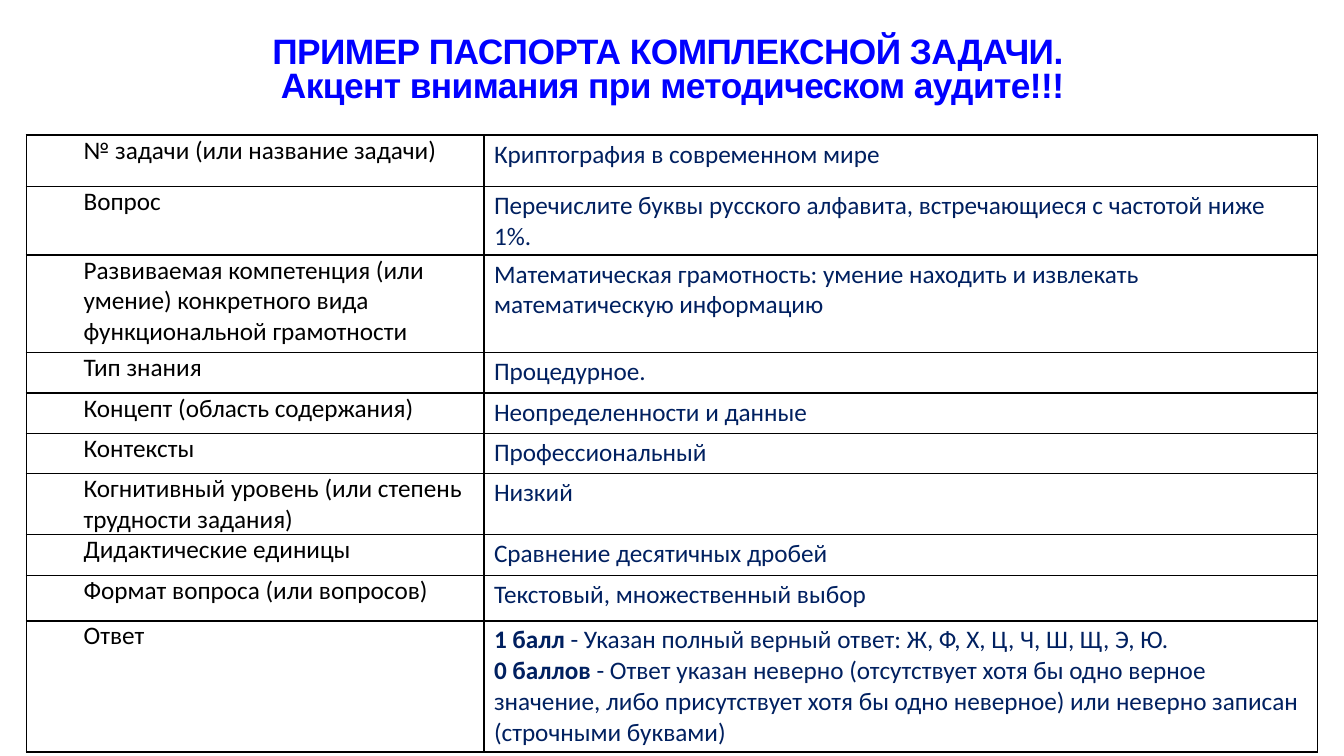
from pptx import Presentation
from pptx.dml.color import RGBColor
from pptx.enum.text import MSO_ANCHOR, PP_ALIGN
from pptx.oxml import parse_xml
from pptx.oxml.ns import nsdecls
from pptx.util import Inches, Pt

COLORS = {"title": "0000FF", "label": "000000", "value": "002060", "border": "000000"}
TITLE_LINES = [
    "ПРИМЕР ПАСПОРТА КОМПЛЕКСНОЙ ЗАДАЧИ. ",
    "Акцент внимания при методическом аудите!!!",
]
COLUMN_WIDTHS = [4.54, 8.27]
PASSPORT = [
    (0.51, "№ задачи (или название задачи)", [("", "Криптография в современном мире")]),
    (0.43, "Вопрос",
     [("", "Перечислите буквы русского алфавита, встречающиеся с частотой ниже 1%.")]),
    (0.97, "Развиваемая компетенция (или умение) конкретного вида функциональной грамотности",
     [("", "Математическая грамотность: умение находить и извлекать математическую информацию")]),
    (0.4, "Тип знания", [("", "Процедурное.")]),
    (0.4, "Концепт (область содержания)", [("", "Неопределенности и данные")]),
    (0.4, "Контексты", [("", "Профессиональный")]),
    (0.6, "Когнитивный уровень (или степень трудности задания)", [("", "Низкий")]),
    (0.41, "Дидактические единицы", [("", "Сравнение десятичных дробей")]),
    (0.45, "Формат вопроса (или вопросов)", [("", "Текстовый, множественный выбор")]),
    (1.3, "Ответ", [
        ("1 балл ", "- Указан полный верный ответ: Ж, Ф, Х, Ц, Ч, Ш, Щ, Э, Ю."),
        ("0 баллов ", "- Ответ указан неверно (отсутствует хотя бы одно верное значение, либо "
                      "присутствует хотя бы одно неверное) или неверно записан (строчными буквами)"),
    ]),
]


def set_margins(box, horizontal, vertical):
    """Set equal side margins and equal top and bottom margins, in inches."""
    box.margin_left = box.margin_right = Inches(horizontal)
    box.margin_top = box.margin_bottom = Inches(vertical)


def add_run(paragraph, text, color, font="Calibri", size=18, bold=False):
    """Add one formatted run to a paragraph."""
    run = paragraph.add_run()
    run.text = text
    run.font.name = font
    run.font.size = Pt(size)
    run.font.bold = bold
    run.font.color.rgb = RGBColor.from_string(COLORS[color])
    return run


def add_title(slide, left, top, width, height):
    """Place the centred two-line title in the given box."""
    shape = slide.shapes.add_textbox(Inches(left), Inches(top), Inches(width), Inches(height))
    frame = shape.text_frame
    frame.word_wrap = True
    frame.vertical_anchor = MSO_ANCHOR.MIDDLE
    set_margins(frame, 0.11, 0.06)
    paragraph = frame.paragraphs[0]
    paragraph.alignment = PP_ALIGN.CENTER
    paragraph.line_spacing = 0.8
    for index, line in enumerate(TITLE_LINES):
        if index:
            paragraph.add_line_break()
        run = add_run(paragraph, line, "title", "Arial", 25.2, True)
        run._r.get_or_add_rPr().set("spc", "-40")


def style_cell(cell):
    """Give a cell thin borders on all sides and no fill."""
    properties = cell._tc.get_or_add_tcPr()
    for side in ("lnL", "lnR", "lnT", "lnB"):
        properties.append(parse_xml(
            f'<a:{side} {nsdecls("a")} w="{Pt(1)}"><a:solidFill>'
            f'<a:srgbClr val="{COLORS["border"]}"/></a:solidFill></a:{side}>'))
    cell.fill.background()


def fill_label(cell, label):
    """Write the indented name of a passport field."""
    set_margins(cell, 0.07, 0)
    paragraph = cell.text_frame.paragraphs[0]
    properties = paragraph._p.get_or_add_pPr()
    properties.set("marL", str(Inches(0.5)))
    properties.set("indent", "0")
    properties.append(parse_xml(
        f'<a:tabLst {nsdecls("a")}><a:tab pos="{Inches(0.69)}" algn="l"/></a:tabLst>'))
    add_run(paragraph, label, "label")


def fill_value(cell, entries):
    """Write the value of a passport field, with optional bold lead-ins."""
    set_margins(cell, 0.1, 0.04)
    frame = cell.text_frame
    for index, (lead, text) in enumerate(entries):
        paragraph = frame.add_paragraph() if index else frame.paragraphs[0]
        if lead:
            add_run(paragraph, lead, "value", bold=True)
        add_run(paragraph, text, "value")


def add_passport(slide, left, top):
    """Place the passport table with its corner at the given point."""
    height = sum(row[0] for row in PASSPORT)
    table = slide.shapes.add_table(
        len(PASSPORT), len(COLUMN_WIDTHS), Inches(left), Inches(top),
        Inches(sum(COLUMN_WIDTHS)), Inches(height)).table
    table.first_row = table.horz_banding = False
    for column, width in zip(table.columns, COLUMN_WIDTHS):
        column.width = Inches(width)
    for index, (row_height, label, entries) in enumerate(PASSPORT):
        table.rows[index].height = Inches(row_height)
        fill_label(table.cell(index, 0), label)
        fill_value(table.cell(index, 1), entries)
    for cell in table.iter_cells():
        style_cell(cell)


def main():
    """Build and save the slide."""
    presentation = Presentation()
    presentation.slide_width = Inches(13.33)
    presentation.slide_height = Inches(7.5)
    slide = presentation.slides.add_slide(presentation.slide_layouts[6])
    add_title(slide, 0.67, 0.3, 12, 0.81)
    add_passport(slide, 0.26, 1.34)
    presentation.save("out.pptx")


if __name__ == "__main__":
    main()
